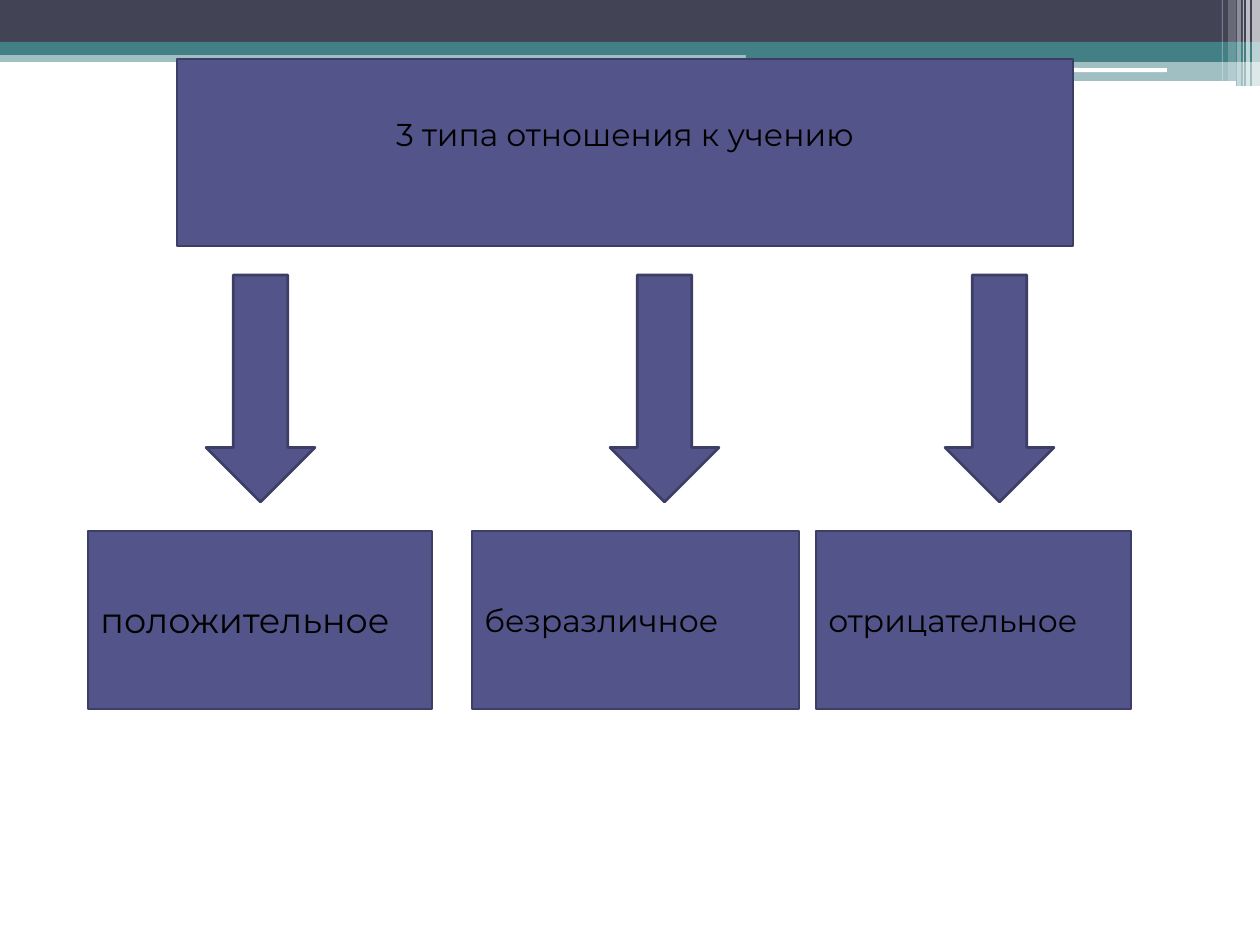
from lxml import etree
from pptx import Presentation, util as u
from pptx.dml.color import RGBColor
from pptx.enum import shapes, text
from pptx.oxml.ns import qn

PX = 914400 / 126
WIDTH, HEIGHT = 1260, 945
FONT = "Montserrat"

BLACK = RGBColor(0x00, 0x00, 0x00)
WHITE = RGBColor(0xFF, 0xFF, 0xFF)
SLATE = RGBColor(0x42, 0x44, 0x56)
TEAL = RGBColor(0x43, 0x80, 0x86)
INDIGO = RGBColor(0x53, 0x54, 0x8A)
INDIGO_DARK = RGBColor(0x3D, 0x3E, 0x66)

RECT = shapes.MSO_SHAPE.RECTANGLE
ROUNDED = shapes.MSO_SHAPE.ROUNDED_RECTANGLE
ARROW = shapes.MSO_SHAPE.DOWN_ARROW


def px(n):
    return u.Emu(round(n * PX))


def add_filled(s, kind, box, color, alpha=100):
    """Add a borderless shape; alpha is its opacity in percent."""
    sp = s.shapes.add_shape(kind, *map(px, box))
    sp.shadow.inherit = False
    sp.fill.solid()
    sp.fill.fore_color.rgb = color
    sp.line.fill.background()
    if alpha < 100:
        clr = sp.fill._xPr.find(qn("a:solidFill"))[0]
        etree.SubElement(clr, qn("a:alpha"), val=str(alpha * 1000))
    return sp


def add_outlined(s, kind, box):
    sp = add_filled(s, kind, box, INDIGO)
    sp.line.color.rgb = INDIGO_DARK
    sp.line.width = u.Pt(1.5)
    return sp


def add_label_box(s, box, label, size, align=text.PP_ALIGN.LEFT):
    sp = add_outlined(s, RECT, box)
    tf = sp.text_frame
    tf.word_wrap = True
    tf.vertical_anchor = text.MSO_ANCHOR.MIDDLE
    p = tf.paragraphs[0]
    p.text = label
    p.alignment = align
    p.font.name = FONT
    p.font.size = u.Pt(size)
    p.font.color.rgb = BLACK
    return sp


def add_header(s, x, y, w):
    """Draw the coloured bands, thin white rules and right-hand stripes."""
    split = 746
    right = w - split
    bands = [
        (0, 50, w, 12, TEAL, 50),
        (0, 0, w, 42, SLATE, 100),
        (0, 42, w, 13, TEAL, 100),
        (split, 49, right, 13, TEAL, 100),
        (split, 61, right, 25, TEAL, 50),
    ]
    for left, top, width, height, color, alpha in bands:
        add_filled(s, RECT, (x + left, y + top, width, height), color, alpha)

    for left, top, width, height in [(745, 68, 422, 4), (1016, 81, 220, 5)]:
        sp = add_filled(s, ROUNDED, (x + left, y + top, width, height), WHITE)
        sp.adjustments[0] = 0.17

    stripes = [  # distance from the right edge, width, height, opacity
        (8, 8, 86, 65),
        (14, 4, 86, 65),
        (17, 1, 86, 60),
        (23, 4, 86, 40),
        (32, 8, 81, 20),
        (38, 1, 81, 30),
    ]
    for inset, width, height, alpha in stripes:
        add_filled(s, RECT, (x + w - inset, y, width, height), WHITE, alpha)


def add_types_diagram(s, x, y):
    """Draw the title box, with an arrow down to each type of attitude."""
    title = add_label_box(s, (x + 89, y, 896, 187), "3 типа отношения к учению",
                          18, text.PP_ALIGN.CENTER)
    title.text_frame.margin_bottom = px(43)  # lifts the title above centre

    columns = [  # box left, box width, arrow left, label, font size
        (0, 344, 118, "положительное", 20),
        (384, 327, 522, "безразличное", 18),
        (728, 315, 857, "отрицательное", 18),
    ]
    for left, width, arrow_left, label, size in columns:
        add_label_box(s, (x + left, y + 472, width, 178), label, size)
        add_outlined(s, ARROW, (x + arrow_left, y + 216, 109, 227))


def main():
    prs = Presentation()
    prs.slide_width, prs.slide_height = px(WIDTH), px(HEIGHT)
    s = prs.slides.add_slide(prs.slide_layouts[6])
    s.background.fill.solid()
    s.background.fill.fore_color.rgb = WHITE
    add_header(s, 0, 0, WIDTH)
    add_types_diagram(s, 88, 59)
    prs.save("out.pptx")


if __name__ == "__main__":
    main()
